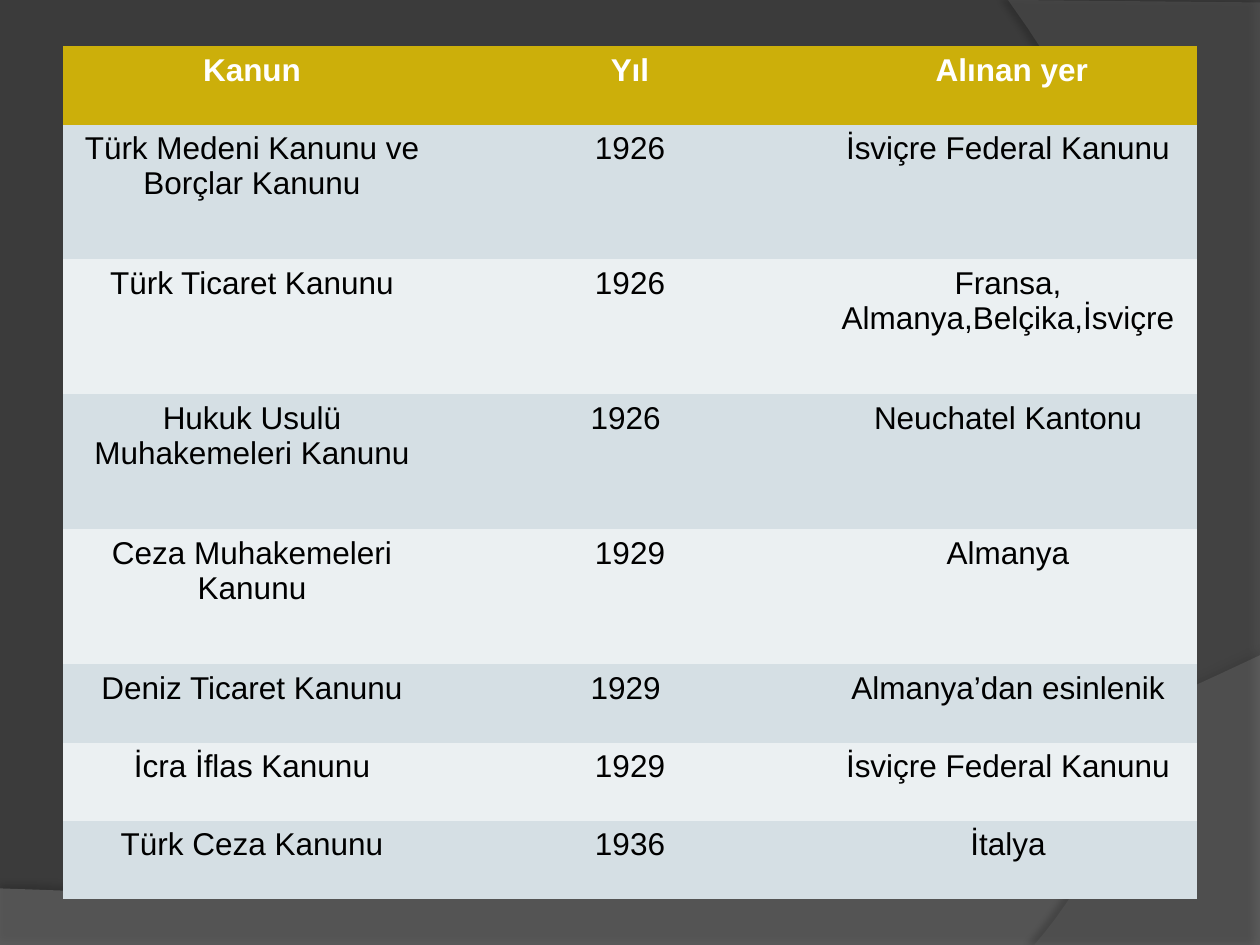
from lxml.etree import SubElement
from pptx import Presentation
from pptx.dml.color import RGBColor
from pptx.enum.text import PP_ALIGN
from pptx.oxml.ns import qn
from pptx.util import Cm, Pt

THEME = {
    "font": "Arial", "size": Pt(18), "bg": "3B3B3B",
    "head_fill": "CCAF0A", "head_text": "FFFFFF",
    "bands": ("D5DFE4", "EBF0F2"), "text": "000000", "shadow": "000000",
}
HEADER = ("Kanun", "Yıl", " Alınan yer")
LAWS = [
    ("Türk Medeni Kanunu ve Borçlar Kanunu", "1926", "İsviçre Federal Kanunu"),
    ("Türk Ticaret Kanunu", "1926", "Fransa, Almanya,Belçika,İsviçre"),
    ("Hukuk Usulü Muhakemeleri Kanunu", "1926 ", "Neuchatel Kantonu"),
    ("Ceza Muhakemeleri Kanunu", "1929", "Almanya"),
    ("Deniz Ticaret Kanunu", "1929 ", "Almanya’dan esinlenik"),
    ("İcra İflas Kanunu", "1929", "İsviçre Federal Kanunu"),
    ("Türk Ceza Kanunu", "1936", "İtalya"),
]
TALL_ROWS = range(1, 5)
ROW_H, TALL_H, COL_W = 1.58, 2.72, 7.62
LEFT, TOP = 1.27, 0.93

WAVES = [
    {"corners": [(0, 17.91), (0, 19.05), (25.4, 19.05)],
     "curve": [(25.4, 13.21), (14.2, 18.52), (9.93, 18.26), (0, 17.91)],
     "fill": "7F7F7F", "alpha": 45,
     "shadow": {"alpha": 35, "blur": 4, "dist": 3.5, "angle": 270}},
    {"corners": [(25.4, 0.05), (25.4, 19.05)],
     "curve": [(20.85, 19.05), (23.75, 15.72), (25.86, 7.62), (20.32, 0)],
     "fill": "5E5E5E", "alpha": 40,
     "shadow": {"alpha": 45, "blur": 4, "dist": 4, "angle": 180}},
]
CURVE_STEPS = 40


def bezier(points):
    for i in range(CURVE_STEPS + 1):
        t = i / CURVE_STEPS
        weights = ((1 - t) ** 3, 3 * t * (1 - t) ** 2, 3 * t * t * (1 - t), t ** 3)
        yield tuple(sum(w * p[axis] for w, p in zip(weights, points)) for axis in (0, 1))


def set_alpha(color, percent):
    SubElement(color, qn("a:alpha"), val=str(percent * 1000))


def add_shadow(sp, alpha, blur, dist, angle):
    sp.shadow.inherit = False
    effects = sp._element.spPr.find(qn("a:effectLst"))
    outer = SubElement(effects, qn("a:outerShdw"), blurRad=str(Pt(blur)),
                       dist=str(Pt(dist)), dir=str(angle * 60000), rotWithShape="0")
    set_alpha(SubElement(outer, qn("a:srgbClr"), val=THEME["shadow"]), alpha)


def add_wave(s, wave):
    points = [(Cm(x), Cm(y)) for x, y in wave["corners"] + list(bezier(wave["curve"]))]
    builder = s.shapes.build_freeform(*points[0])
    builder.add_line_segments(points[1:], close=True)
    sp = builder.convert_to_shape()
    sp.fill.solid()
    sp.fill.fore_color.rgb = RGBColor.from_string(wave["fill"])
    sp.line.fill.background()
    set_alpha(sp._element.spPr.find(qn("a:solidFill"))[0], wave["alpha"])
    add_shadow(sp, **wave["shadow"])


def add_law_table(s):
    rows = [HEADER] + LAWS
    heights = [TALL_H if i in TALL_ROWS else ROW_H for i in range(len(rows))]
    table = s.shapes.add_table(len(rows), len(HEADER), Cm(LEFT), Cm(TOP),
                               Cm(COL_W * len(HEADER)), Cm(sum(heights))).table
    for col in table.columns:
        col.width = Cm(COL_W)
    for i, (texts, height) in enumerate(zip(rows, heights)):
        table.rows[i].height = Cm(height)
        head = i == 0
        fill = THEME["head_fill"] if head else THEME["bands"][(i - 1) % 2]
        color = THEME["head_text"] if head else THEME["text"]
        for cell, text in zip(table.rows[i].cells, texts):
            cell.fill.solid()
            cell.fill.fore_color.rgb = RGBColor.from_string(fill)
            for side in ("a:lnB", "a:lnT", "a:lnR", "a:lnL"):
                border = cell._tc.tcPr.makeelement(qn(side), {"w": "0"})
                SubElement(border, qn("a:noFill"))
                cell._tc.tcPr.insert(0, border)
            cell.text = text
            p = cell.text_frame.paragraphs[0]
            p.alignment = PP_ALIGN.CENTER
            p.font.name, p.font.size, p.font.bold = THEME["font"], THEME["size"], head
            p.font.color.rgb = RGBColor.from_string(color)


def main():
    prs = Presentation()
    prs.slide_width, prs.slide_height = Cm(25.4), Cm(19.05)
    s = prs.slides.add_slide(prs.slide_layouts[6])
    s.background.fill.solid()
    s.background.fill.fore_color.rgb = RGBColor.from_string(THEME["bg"])
    for wave in WAVES:
        add_wave(s, wave)
    add_law_table(s)
    prs.save("out.pptx")


if __name__ == "__main__":
    main()
